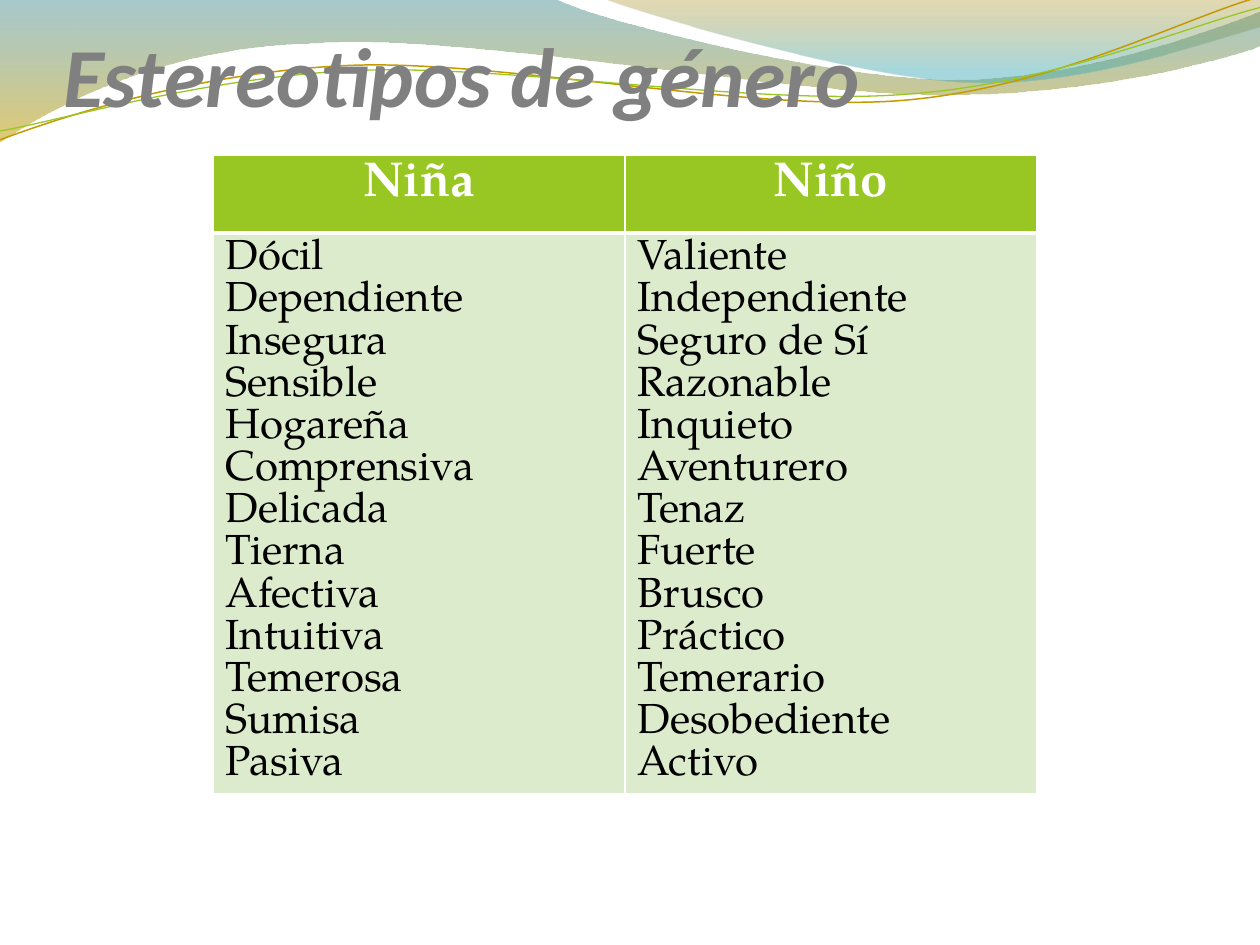
"""Build a slide contrasting gender stereotypes in a two-column table."""
from lxml import etree
from pptx import Presentation
from pptx.dml.color import RGBColor
from pptx.enum import text
from pptx.oxml import ns, parse_xml
from pptx.util import Inches, Pt

TITLE = "Estereotipos de género"
COLUMNS = {
    "Niña": ["Dócil", "Dependiente", "Insegura", "Sensible", "Hogareña", "Comprensiva", "Delicada",
             "Tierna", "Afectiva", "Intuitiva", "Temerosa", "Sumisa", "Pasiva"],
    "Niño": ["Valiente", "Independiente", "Seguro de Sí", "Razonable", "Inquieto", "Aventurero", "Tenaz",
             "Fuerte", "Brusco", "Práctico", "Temerario", "Desobediente", "Activo"],
}

WHITE = RGBColor(0xFF, 0xFF, 0xFF)
BLACK = RGBColor(0x00, 0x00, 0x00)
GRAY = RGBColor(0x80, 0x80, 0x80)
GREEN = RGBColor(0x98, 0xC7, 0x23)
PALE_GREEN = RGBColor(0xDD, 0xEB, 0xCD)
GOLD = RGBColor(0xC4, 0x9A, 0x00)
TEAL = RGBColor(0x3B, 0x88, 0x90)
AMBER = RGBColor(0xC9, 0x9E, 0x00)
OLIVE = RGBColor(0xA4, 0x81, 0x00)
AQUA = RGBColor(0x3E, 0xA9, 0xB4)

TABLE_FONT = "TeX Gyre Pagella"
ROW_HEIGHTS = (0.62, 4.45)
ROW_STYLES = (
    dict(size=28, leading=27.6, bold=True, color=WHITE, fill=GREEN, align=text.PP_ALIGN.CENTER, bottom=3),
    dict(size=24, leading=24.1, bold=False, color=BLACK, fill=PALE_GREEN, align=text.PP_ALIGN.LEFT, bottom=1),
)

BANDS = [
    ([(0, 0), (4.4, -0.01),
      (4.76, 0.17, 6.64, 0.63, 7.58, 0.63), (8.53, 0.63, 9.58, 0.26, 10, 0.09), (10.01, 0.36),
      (9.83, 0.44, 8.7, 0.76, 7.46, 0.75), (6.22, 0.75, 3.82, 0.28, 2.57, 0.34),
      (1.29, 0.36, 0.46, 0.83, -0.01, 1.13), (0, 0)],
     [(0, TEAL, 45), (100, AMBER, 55)]),
    ([(4.79, -0.01), (5.09, 0.11, 6.82, 0.62, 7.69, 0.65), (8.56, 0.69, 9.61, 0.32, 10, 0.21), (10, 0),
      (4.79, -0.01)],
     [(0, OLIVE, 30), (80, AQUA, 45)]),
]
WAVES = [
    ([(0, 1.11), (0.48, 0.93, 1.58, 0.57, 2.77, 0.52), (3.95, 0.47, 5.93, 0.89, 7.13, 0.8),
      (8.33, 0.71, 9.38, 0.15, 9.98, -0.02)], GOLD, 0.85),
    ([(0, 1.04), (0.47, 0.96, 1.64, 0.61, 2.83, 0.56), (4.03, 0.51, 5.97, 0.84, 7.17, 0.75),
      (8.36, 0.67, 9.41, 0.21, 10, 0.06)], GREEN, 0.75),
]


def add_outline(page, segments, closed):
    """Add a shadowless freeform whose six-number segments are cubic curves."""
    points = [(Inches(segment[i]), Inches(segment[i + 1]))
              for segment in segments for i in range(0, len(segment), 2)]
    builder = page.shapes.build_freeform(*points[0])
    builder.add_line_segments(points[1:], close=closed)
    shape = builder.convert_to_shape()
    shape.shadow.inherit = False
    lines = iter(list(shape.element.iter(ns.qn("a:lnTo"))))
    for segment in segments[1:]:
        first = next(lines)
        if len(segment) == 6:
            first.tag = ns.qn("a:cubicBezTo")
            for _ in range(2):
                control = next(lines)
                first.append(control[0])
                control.getparent().remove(control)
    return shape


def add_band(page, segments, stops):
    """Add a translucent band shaded from top to bottom."""
    band = add_outline(page, segments, True)
    band.line.fill.background()
    marks = "".join(
        f'<a:gs pos="{place * 1000}"><a:srgbClr val="{color}"><a:alpha val="{opacity * 1000}"/></a:srgbClr></a:gs>'
        for place, color, opacity in stops)
    gradient = parse_xml(f'<a:gradFill {ns.nsdecls("a")} rotWithShape="1"><a:gsLst>{marks}</a:gsLst>'
                         '<a:lin ang="5400000" scaled="0"/></a:gradFill>')
    band.element.spPr.find(ns.qn("a:custGeom")).addnext(gradient)


def add_wave(page, segments, color, width):
    """Add a thin open curve."""
    wave = add_outline(page, segments, False)
    wave.fill.background()
    wave.line.color.rgb = color
    wave.line.width = Pt(width)


def add_title(page):
    """Fill the title placeholder and bring it to the front."""
    title = page.shapes.title
    title.left, title.top, title.width, title.height = map(Inches, (0.5, -0.26, 9, 1.25))
    frame = title.text_frame
    frame.text = TITLE
    frame.word_wrap = True
    frame.vertical_anchor = text.MSO_ANCHOR.BOTTOM
    frame.margin_left = frame.margin_right = frame.margin_bottom = 0
    para = frame.paragraphs[0]
    para.alignment = text.PP_ALIGN.LEFT
    font = para.font
    font.name, font.size, font.bold, font.italic = "Calibri", Pt(48), True, True
    font.color.rgb = GRAY
    page.shapes.element.append(title.element)


def format_cell(cell, style):
    """Apply borders, fill and text style to a cell."""
    properties = cell._tc.get_or_add_tcPr()
    for side, width in (("L", 1), ("R", 1), ("T", 1), ("B", style["bottom"])):
        border = etree.SubElement(properties, ns.qn(f"a:ln{side}"), w=str(Pt(width)))
        paint = etree.SubElement(border, ns.qn("a:solidFill"))
        etree.SubElement(paint, ns.qn("a:srgbClr"), val=str(WHITE))
    cell.fill.solid()
    cell.fill.fore_color.rgb = style["fill"]
    for para in cell.text_frame.paragraphs:
        para.alignment = style["align"]
        para.line_spacing = Pt(style["leading"])
        para.font.name, para.font.size, para.font.bold = TABLE_FONT, Pt(style["size"]), style["bold"]
        para.font.color.rgb = style["color"]


def add_traits(page):
    """Add the table with one column of traits per heading."""
    table = page.shapes.add_table(2, len(COLUMNS), Inches(1.69), Inches(1.23),
                                  Inches(6.54), Inches(sum(ROW_HEIGHTS))).table
    for row, height in zip(table.rows, ROW_HEIGHTS):
        row.height = Inches(height)
    for column, (heading, traits) in enumerate(COLUMNS.items()):
        for row, content in enumerate((heading, "\n".join(traits))):
            cell = table.cell(row, column)
            cell.text = content
            format_cell(cell, ROW_STYLES[row])


def main():
    deck = Presentation()
    deck.slide_width, deck.slide_height = Inches(10), Inches(7.5)
    page = deck.slides.add_slide(deck.slide_layouts[5])
    for band in BANDS:
        add_band(page, *band)
    for wave in WAVES:
        add_wave(page, *wave)
    add_title(page)
    add_traits(page)
    deck.save("out.pptx")


if __name__ == "__main__":
    main()
